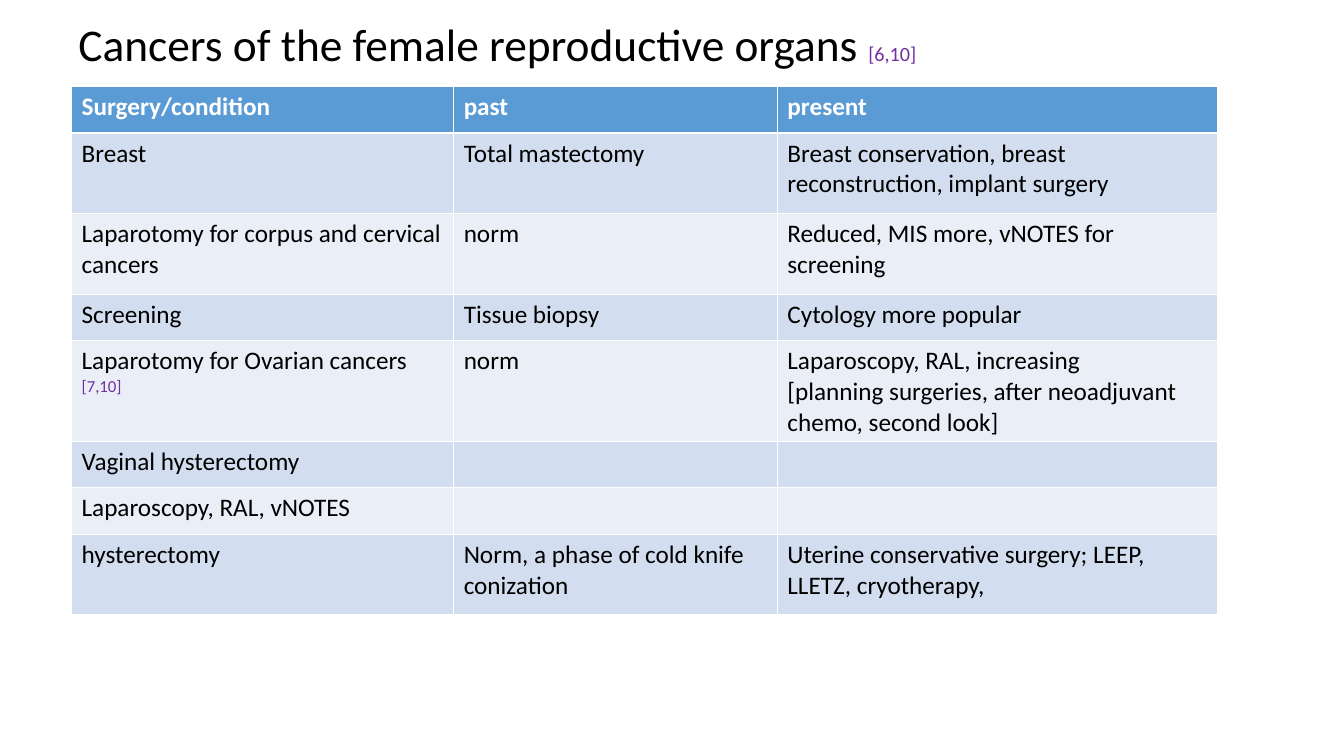
from pptx import Presentation
from pptx.dml.color import RGBColor
from pptx.enum.text import MSO_ANCHOR
from pptx.util import Inches, Pt

FONT = "Calibri"
BLACK = RGBColor(0x00, 0x00, 0x00)
WHITE = RGBColor(0xFF, 0xFF, 0xFF)
PURPLE = RGBColor(0x70, 0x30, 0xA0)
HEADER_BLUE = RGBColor(0x5B, 0x9B, 0xD5)
BAND_DARK = RGBColor(0xD2, 0xDE, 0xEF)
BAND_LIGHT = RGBColor(0xEA, 0xEF, 0xF7)

COLUMN_WIDTHS = [3.79, 3.21, 4.37]
ROW_HEIGHTS = [0.46, 0.8, 0.8, 0.46, 0.88, 0.46, 0.46, 0.8]
ROWS = [
    ("Surgery/condition", "past", "present"),
    ("Breast", "Total mastectomy",
     "Breast conservation, breast reconstruction, implant surgery"),
    ("Laparotomy for corpus and cervical cancers", "norm",
     "Reduced, MIS more, vNOTES for screening"),
    ("Screening", "Tissue biopsy", "Cytology more popular"),
    ("Laparotomy for Ovarian cancers ", "norm",
     "Laparoscopy, RAL, increasing\n"
     "[planning surgeries, after neoadjuvant chemo, second look]"),
    ("Vaginal hysterectomy", "", ""),
    ("Laparoscopy, RAL, vNOTES", "", ""),
    ("hysterectomy", "Norm, a phase of cold knife conization",
     "Uterine conservative surgery; LEEP, LLETZ, cryotherapy,"),
]
OVARIAN_ROW = 4


def add_citation(para, text, size):
    span = para.add_run()
    span.text = text
    span.font.size = Pt(size)
    span.font.color.rgb = PURPLE


deck = Presentation()
deck.slide_width = Inches(13.33)
deck.slide_height = Inches(7.5)
page = deck.slides.add_slide(deck.slide_layouts[6])

title_box = page.shapes.add_textbox(Inches(0.68), Inches(0.2), Inches(11.37), Inches(0.53))
title_box.text_frame.word_wrap = True
title_box.text_frame.vertical_anchor = MSO_ANCHOR.MIDDLE
title = title_box.text_frame.paragraphs[0]
title.text = "Cancers of the female reproductive organs "
title.line_spacing = 0.9
title.font.name = FONT
title.font.size = Pt(32.4)
title.font.color.rgb = BLACK
add_citation(title, "[6,10]", 14.4)
for span, size in zip(title.runs, (32.4, 14.4)):
    span.font.name = FONT
    span.font.size = Pt(size)

table = page.shapes.add_table(
    len(ROWS), len(COLUMN_WIDTHS), Inches(0.71), Inches(0.86),
    Inches(sum(COLUMN_WIDTHS)), Inches(sum(ROW_HEIGHTS))).table
for column, width in zip(table.columns, COLUMN_WIDTHS):
    column.width = Inches(width)

for row_index, (texts, height) in enumerate(zip(ROWS, ROW_HEIGHTS)):
    table.rows[row_index].height = Inches(height)
    is_header = row_index == 0
    band = BAND_DARK if row_index % 2 else BAND_LIGHT
    for column_index, text in enumerate(texts):
        cell = table.cell(row_index, column_index)
        cell.fill.solid()
        cell.fill.fore_color.rgb = HEADER_BLUE if is_header else band
        cell.text = text
        for para in cell.text_frame.paragraphs:
            para.font.name = FONT
            para.font.size = Pt(18)
            para.font.bold = is_header
            para.font.color.rgb = WHITE if is_header else BLACK
            for span in para.runs:
                span.font.name = FONT
                span.font.size = Pt(18)
                span.font.bold = is_header
                span.font.color.rgb = WHITE if is_header else BLACK

add_citation(table.cell(OVARIAN_ROW, 0).text_frame.paragraphs[0], "[7,10]", 12)

deck.save("out.pptx")
